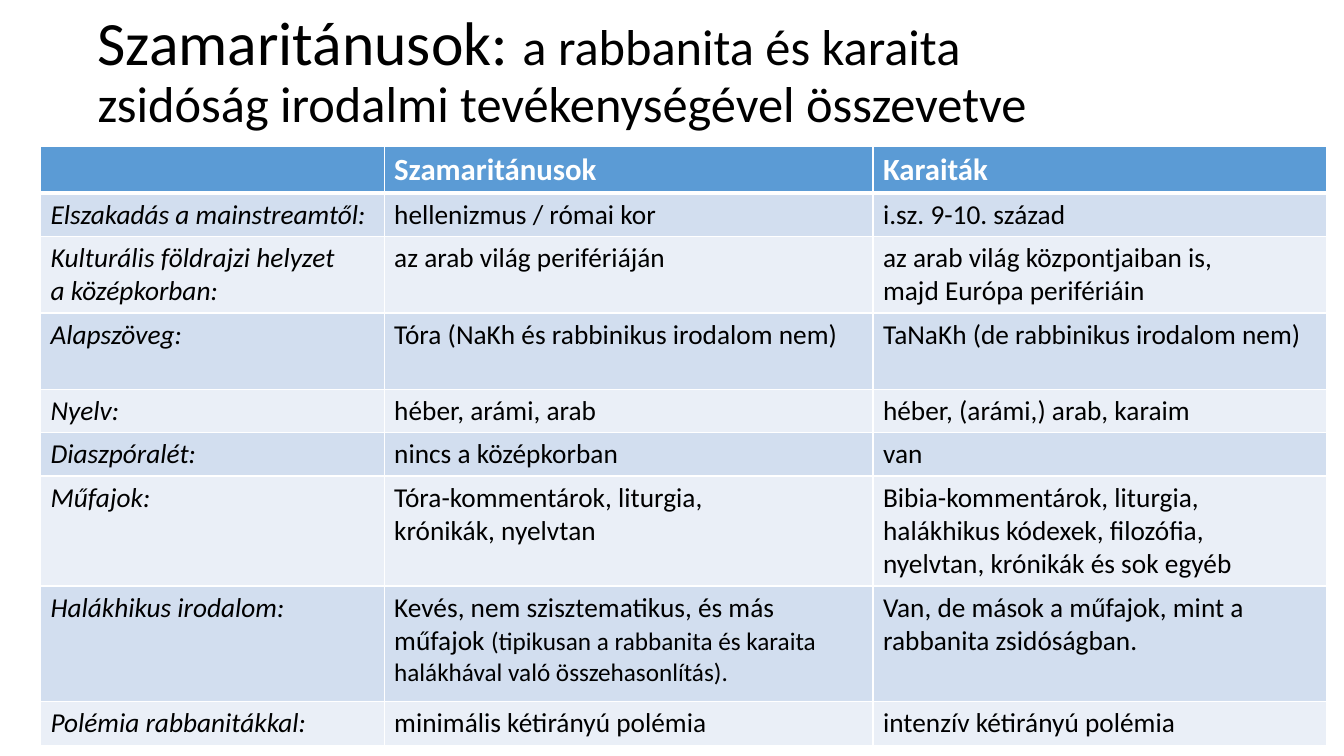
from lxml.etree import SubElement
from pptx import Presentation
from pptx.dml.color import RGBColor
from pptx.enum.text import MSO_ANCHOR
from pptx.oxml.ns import qn
from pptx.util import Cm, Pt

FONT = "Calibri"
COLORS = {
    "text": "000000",
    "header_text": "FFFFFF",
    "border": "FFFFFF",
    "header": "5B9BD5",
    "odd": "D2DEEF",
    "even": "EAEFF7",
}

TITLE = [
    ("Szamaritánusok: ", 44),
    ("a rabbanita és karaita \nzsidóság irodalmi tevékenységével összevetve", 36),
]

HEADER_SIZE, BODY_SIZE, NOTE_SIZE = 22, 19.5, 18
COLUMN_WIDTHS = [8.66, 12.32, 11.43]

# Row height in cm, aspect, Samaritans, Karaites
COMPARISON = [
    (1.02, "", "Szamaritánusok", "Karaiták"),
    (1.09, "Elszakadás a mainstreamtől:", "hellenizmus / római kor", "i.sz. 9-10. század"),
    (1.93, "Kulturális földrajzi helyzet\na középkorban:", "az arab világ perifériáján",
     "az arab világ központjaiban is,\nmajd Európa perifériáin"),
    (1.93, "Alapszöveg:", "Tóra (NaKh és rabbinikus irodalom nem)",
     "TaNaKh (de rabbinikus irodalom nem)"),
    (1.09, "Nyelv:", "héber, arámi, arab", "héber, (arámi,) arab, karaim"),
    (1.09, "Diaszpóralét:", "nincs a középkorban", "van"),
    (2.77, "Műfajok:", "Tóra-kommentárok, liturgia, \nkrónikák, nyelvtan",
     "Bibia-kommentárok, liturgia, halákhikus kódexek, filozófia, \n"
     "nyelvtan, krónikák és sok egyéb"),
    (2.92, "Halákhikus irodalom:",
     [("Kevés, nem szisztematikus, és más műfajok ", BODY_SIZE),
      ("(tipikusan a rabbanita és karaita halákhával való összehasonlítás).", NOTE_SIZE)],
     "Van, de mások a műfajok, mint a rabbanita zsidóságban."),
    (1.09, "Polémia rabbanitákkal:", "minimális kétirányú polémia",
     "intenzív kétirányú polémia"),
]


def add_runs(paragraph, pieces, color, bold=False, italic=False):
    """Add (text, size) pieces; a newline becomes a line break."""
    for text, size in pieces:
        for number, line in enumerate(text.split("\n")):
            if number:
                paragraph.add_line_break()
            run = paragraph.add_run()
            run.text = line
            run.font.name = FONT
            run.font.size = Pt(size)
            run.font.bold = bold
            run.font.italic = italic
            run.font.color.rgb = RGBColor.from_string(COLORS[color])


def set_borders(cell, bottom):
    properties = cell._tc.get_or_add_tcPr()
    widths = {"a:lnL": 1, "a:lnR": 1, "a:lnT": 1, "a:lnB": bottom}
    for position, (tag, width) in enumerate(widths.items()):
        line = SubElement(properties, qn(tag), w=str(Pt(width)))
        fill = SubElement(line, qn("a:solidFill"))
        SubElement(fill, qn("a:srgbClr"), val=COLORS["border"])
        properties.insert(position, line)


def fill_cell(cell, content, row, column):
    is_header = row == 0
    band = "header" if is_header else "odd" if row % 2 else "even"
    cell.fill.solid()
    cell.fill.fore_color.rgb = RGBColor.from_string(COLORS[band])
    set_borders(cell, bottom=3 if is_header else 1)
    if not content:
        return
    if isinstance(content, str):
        content = [(content, HEADER_SIZE if is_header else BODY_SIZE)]
    add_runs(cell.text_frame.paragraphs[0], content,
             "header_text" if is_header else "text",
             bold=is_header, italic=column == 0)


def add_title(slide):
    title = slide.shapes.add_textbox(Cm(2.21), Cm(0), Cm(29.21), Cm(3.68))
    frame = title.text_frame
    frame.word_wrap = True
    frame.vertical_anchor = MSO_ANCHOR.MIDDLE
    frame.paragraphs[0].line_spacing = 0.9
    add_runs(frame.paragraphs[0], TITLE, "text")


def add_comparison(slide):
    heights = [height for height, *_ in COMPARISON]
    comparison = slide.shapes.add_table(
        len(COMPARISON), len(COLUMN_WIDTHS), Cm(1.02), Cm(3.68),
        Cm(sum(COLUMN_WIDTHS)), Cm(sum(heights))).table
    for column, width in zip(comparison.columns, COLUMN_WIDTHS):
        column.width = Cm(width)
    for row, (height, *contents) in enumerate(COMPARISON):
        comparison.rows[row].height = Cm(height)
        for column, content in enumerate(contents):
            fill_cell(comparison.cell(row, column), content, row, column)


def main():
    presentation = Presentation()
    presentation.slide_width = Cm(33.87)
    presentation.slide_height = Cm(19.05)
    slide = presentation.slides.add_slide(presentation.slide_layouts[6])
    add_title(slide)
    add_comparison(slide)
    presentation.save("out.pptx")


if __name__ == "__main__":
    main()
